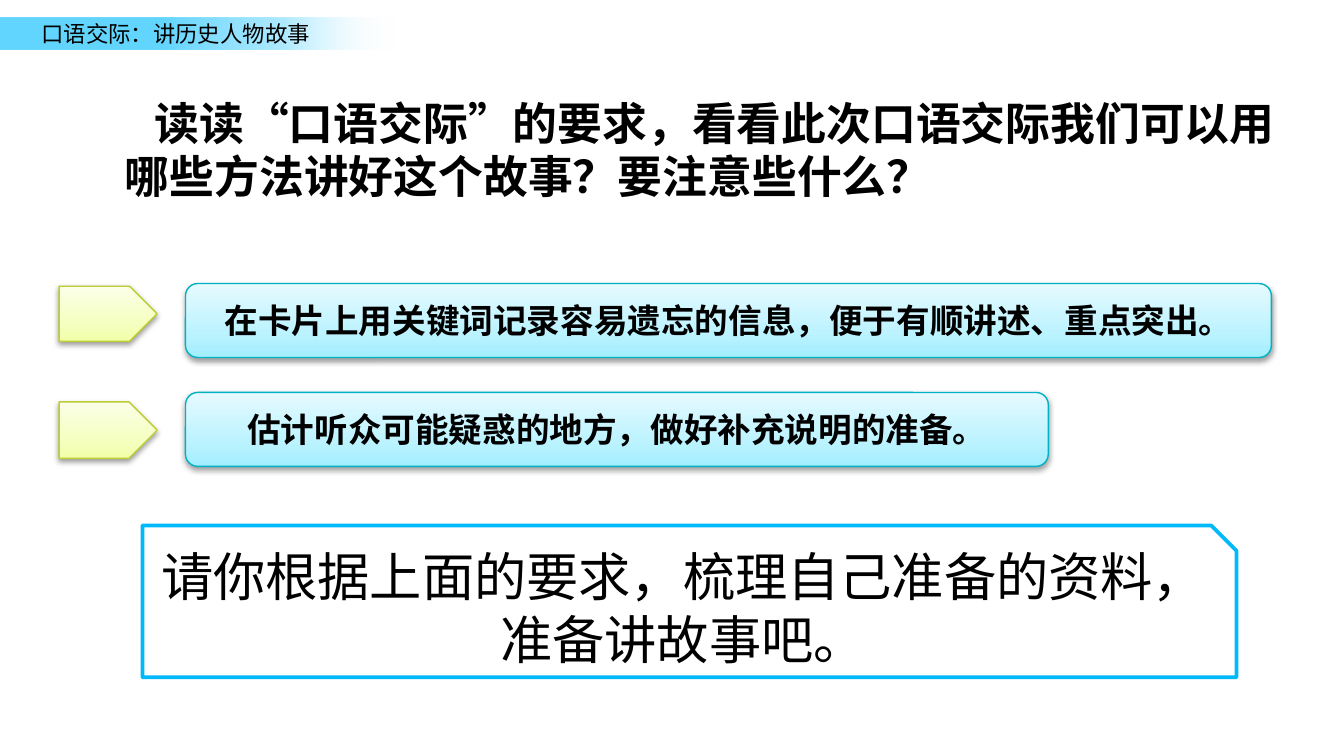
from lxml import etree
from pptx import Presentation
from pptx.dml.color import RGBColor
from pptx.enum.shapes import MSO_SHAPE
from pptx.enum.text import MSO_ANCHOR, MSO_AUTO_SIZE, PP_ALIGN
from pptx.oxml import parse_xml
from pptx.oxml.ns import nsdecls, qn
from pptx.util import Inches, Pt

LEFT, CENTER = PP_ALIGN.LEFT, PP_ALIGN.CENTER
TOP, MIDDLE = MSO_ANCHOR.TOP, MSO_ANCHOR.MIDDLE
RECTANGLE, ARROW = MSO_SHAPE.RECTANGLE, MSO_SHAPE.PENTAGON
ROUNDED, SNIPPED = MSO_SHAPE.ROUNDED_RECTANGLE, MSO_SHAPE.SNIP_1_RECTANGLE

BLACK = RGBColor(0x00, 0x00, 0x00)
WHITE = RGBColor(0xFF, 0xFF, 0xFF)
SKY = RGBColor(0x63, 0xD6, 0xFF)
PALE_SKY = RGBColor(0x97, 0xE4, 0xFF)
BLUE = RGBColor(0x00, 0xB9, 0xFA)
LIME = RGBColor(0xBD, 0xCD, 0x32)
TEAL = RGBColor(0x00, 0xB1, 0xC3)
LIME_STOPS = [(0, RGBColor(0xF1, 0xFF, 0xA8), 100),
              (35, RGBColor(0xF5, 0xFF, 0xC2), 100),
              (100, RGBColor(0xFB, 0xFF, 0xE8), 100)]
TEAL_STOPS = [(0, RGBColor(0xA2, 0xEE, 0xFF), 100),
              (35, RGBColor(0xBD, 0xF3, 0xFF), 100),
              (100, RGBColor(0xE6, 0xFA, 0xFF), 100)]
HEADER_STOPS = [(40, SKY, 100), (70, PALE_SKY, 76), (97, WHITE, 0)]

SANS = "Noto Sans CJK SC"
SERIF = "Times New Roman"
CELL = Inches(0.01)  # the 16:9 slide is 1000 grid columns wide


def set_gradient(shape, stops, angle):
    """Fill with (position, colour, opacity) stops, all in percent."""
    shape.fill.gradient()
    shape.fill.gradient_angle = angle
    stop_list = shape._element.spPr.find(qn("a:gradFill")).find(qn("a:gsLst"))
    for old_stop in list(stop_list):
        stop_list.remove(old_stop)
    for position, color, opacity in stops:
        stop = etree.SubElement(stop_list, qn("a:gs"), pos=str(position * 1000))
        rgb = etree.SubElement(stop, qn("a:srgbClr"), val=str(color))
        etree.SubElement(rgb, qn("a:alpha"), val=str(opacity * 1000))


def write(shape, text, size, font=SANS, bold=False, align=CENTER, anchor=MIDDLE):
    frame = shape.text_frame
    frame.auto_size = MSO_AUTO_SIZE.NONE
    frame.word_wrap = True
    frame.vertical_anchor = anchor
    paragraph = frame.paragraphs[0]
    paragraph.text = text
    paragraph.alignment = align
    if anchor == TOP:  # the two-line texts are set tight
        paragraph.line_spacing = Pt(size * 1.2)
    paragraph.font.size = Pt(size)
    paragraph.font.bold = bold
    paragraph.font.color.rgb = BLACK
    paragraph.font.name = font
    properties = paragraph._p.get_or_add_pPr()
    etree.SubElement(properties.find(qn("a:defRPr")), qn("a:ea"), typeface=SANS)
    return paragraph


presentation = Presentation()
presentation.slide_width = 1000 * CELL
presentation.slide_height = presentation.slide_width * 9 // 16
slide = presentation.slides.add_slide(presentation.slide_layouts[5])
slide.background.fill.solid()
slide.background.fill.fore_color.rgb = WHITE
shapes = slide.shapes

# Lesson name on a fading band
band = shapes.add_shape(RECTANGLE, 0, 13 * CELL, 303 * CELL, 24 * CELL)
band.shadow.inherit = False
band.line.fill.background()
set_gradient(band, HEADER_STOPS, 0)
lesson = shapes.add_textbox(21 * CELL, 10 * CELL, 220 * CELL, 30 * CELL)
write(lesson, "口语交际：讲历史人物故事", 12, align=LEFT)
lesson.text_frame.word_wrap = False

# Question
title = shapes.title
title.left, title.top = 83 * CELL, 66 * CELL
title.width, title.height = 893 * CELL, 91 * CELL
question = write(
    title,
    "读读“口语交际”的要求，看看此次口语交际我们可以用哪些方法讲好这个故事？要注意些什么？",
    24, bold=True, align=LEFT, anchor=TOP)
question._p.get_or_add_pPr().set("indent", str(22 * CELL))

# Tips, each with its arrow: arrow top and height, box top and width, text
tips = [
    (213, 41, 211, 808, "在卡片上用关键词记录容易遗忘的信息，便于有顺讲述、重点突出。"),
    (299, 42, 292, 642, "估计听众可能疑惑的地方，做好补充说明的准备。"),
]
for arrow_top, arrow_height, box_top, box_width, text in tips:
    arrow = shapes.add_shape(ARROW, 44 * CELL, arrow_top * CELL,
                             73 * CELL, arrow_height * CELL)
    box = shapes.add_shape(ROUNDED, 138 * CELL, box_top * CELL,
                           box_width * CELL, 55 * CELL)
    write(box, text, 18, font=SERIF, bold=True)
    for shape, stops, outline in ((arrow, LIME_STOPS, LIME), (box, TEAL_STOPS, TEAL)):
        set_gradient(shape, stops, 90)
        shape.line.color.rgb = outline
        shape.line.width = Pt(0.75)
        shape._element.spPr.append(parse_xml(
            f'<a:effectLst {nsdecls("a")}>'
            f'<a:outerShdw blurRad="{Pt(3.1)}" dist="{Pt(1.6)}" dir="5400000" rotWithShape="0">'
            f'<a:srgbClr val="{BLACK}"><a:alpha val="38000"/></a:srgbClr>'
            '</a:outerShdw></a:effectLst>'))

# Task
task = shapes.add_shape(SNIPPED, 106 * CELL, 391 * CELL, 814 * CELL, 113 * CELL)
task.shadow.inherit = False
task.fill.solid()
task.fill.fore_color.rgb = WHITE
task.line.color.rgb = BLUE
task.line.width = Pt(2)
write(task, "请你根据上面的要求，梳理自己准备的资料，准备讲故事吧。", 28, anchor=TOP)

presentation.save("out.pptx")
